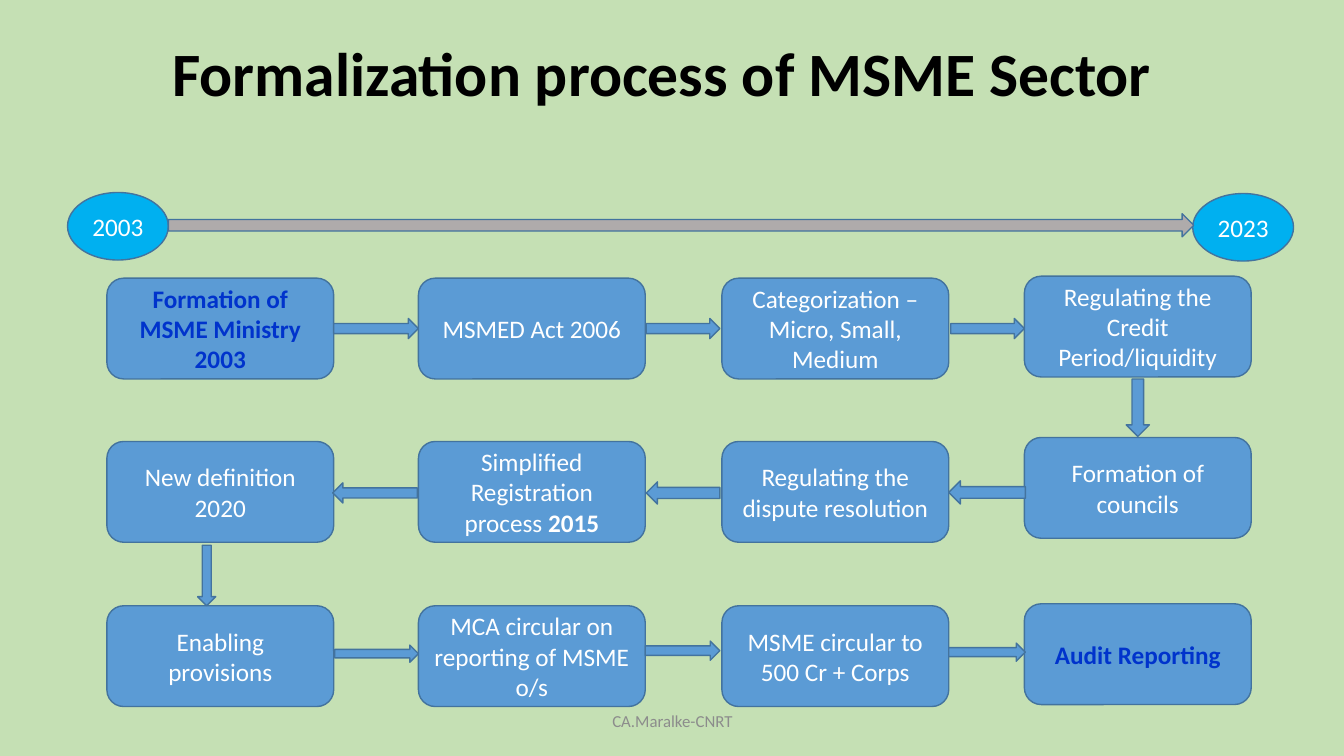
from pptx import Presentation
from pptx.dml.color import RGBColor
from pptx.enum.shapes import MSO_SHAPE
from pptx.enum.text import MSO_ANCHOR, PP_ALIGN
from pptx.util import Pt

SCALE = 9144
BLUE, EDGE, SKY, GRAY = "5B9BD5", "43739E", "00B0F0", "AFABAB"
WHITE, NAVY, BLACK, DIM = "FFFFFF", "0033CC", "000000", "8C8C8C"


def px(count):
    return count * SCALE


def color(code):
    return RGBColor.from_string(code)


class Board:
    font = "Calibri"

    def __init__(self, deck, back):
        self.slide = deck.slides.add_slide(deck.slide_layouts[6])
        fill = self.slide.background.fill
        fill.solid()
        fill.fore_color.rgb = color(back)

    def words(self, shape, runs, size, ink, space=1.0):
        frame = shape.text_frame
        frame.word_wrap = True
        frame.vertical_anchor = MSO_ANCHOR.MIDDLE
        para = frame.paragraphs[0]
        para.alignment = PP_ALIGN.CENTER
        para.line_spacing = space
        for text, bold in runs:
            run = para.add_run()
            run.text = text
            run.font.name = self.font
            run.font.size = Pt(size)
            run.font.bold = bold
            run.font.color.rgb = color(ink)

    def label(self, area, runs, size, ink, space=1.0):
        box = self.slide.shapes.add_textbox(*map(px, area))
        self.words(box, runs, size, ink, space)

    def shape(self, kind, area, fill):
        shape = self.slide.shapes.add_shape(kind, *map(px, area))
        shape.shadow.inherit = False
        shape.fill.solid()
        shape.fill.fore_color.rgb = color(fill)
        shape.line.color.rgb = color(EDGE)
        shape.line.width = Pt(1)
        return shape

    def step(self, left, top, runs, ink=WHITE):
        box = self.shape(MSO_SHAPE.ROUNDED_RECTANGLE, (left, top, 225, 100), BLUE)
        self.words(box, runs, 18, ink)

    def year(self, left, top, text):
        oval = self.shape(MSO_SHAPE.OVAL, (left, top, 100, 67), SKY)
        self.words(oval, [(text, False)], 18, WHITE)

    def arrow(self, area, turn=0, fill=BLUE):
        self.shape(MSO_SHAPE.RIGHT_ARROW, area, fill).rotation = turn


COLS = (106, 415, 716, 1016)
ROWS = (
    (276, 274, (
        [("Formation of MSME Ministry 2003", True)],
        [("MSMED Act 2006", False)],
        [("Categorization – Micro, Small, Medium", False)],
        [("Regulating the Credit Period/liquidity", False)],
    )),
    (438, 434, (
        [("New definition 2020", False)],
        [("Simplified Registration process ", False), ("2015", True)],
        [("Regulating the dispute resolution", False)],
        [("Formation of councils", False)],
    )),
    (601, 599, (
        [("Enabling provisions", False)],
        [("MCA circular on reporting of MSME o/s", False)],
        [("MSME circular to 500 Cr + Corps", False)],
        [("Audit Reporting", True)],
    )),
)
ARROWS = {
    0: (
        (331, 316, 84, 20), (641, 316, 73, 20), (943, 316, 73, 20),
        (332, 640, 83, 17), (640, 636, 74, 19), (941, 638, 76, 18),
    ),
    90: ((1100, 393, 57, 23), (175, 562, 60, 18)),
    180: ((941, 477, 76, 23), (641, 478, 73, 22), (330, 479, 84, 20)),
}


def main():
    deck = Presentation()
    deck.slide_width, deck.slide_height = px(1333), px(750)
    board = Board(deck, "C5E0B4")
    title = [("Formalization process of MSME Sector", True)]
    board.label((57, 35, 1200, 81), title, 44, BLACK, 0.9)
    board.label((442, 695, 450, 40), [("CA.Maralke-CNRT", False)], 12, DIM)
    board.year(67, 191, "2003")
    board.year(1183, 192, "2023")
    board.arrow((167, 212, 1017, 23), fill=GRAY)

    for top, last, steps in ROWS:
        for left, runs in zip(COLS, steps):
            ink = NAVY if runs[0][1] else WHITE
            board.step(left, last if left == COLS[-1] else top, runs, ink)

    for turn, areas in ARROWS.items():
        for area in areas:
            board.arrow(area, turn)

    deck.save("out.pptx")


if __name__ == "__main__":
    main()
